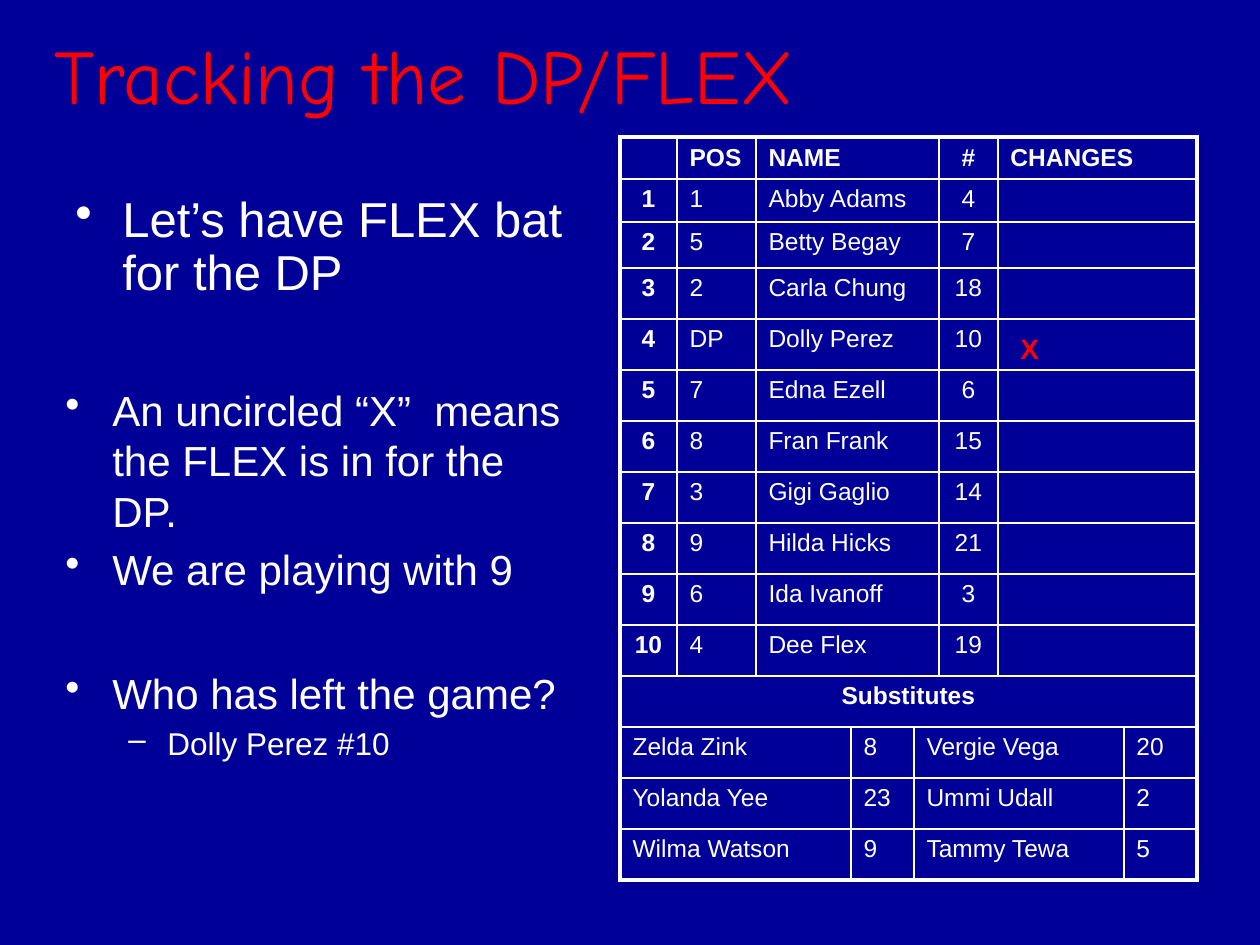
from dataclasses import dataclass

from lxml import etree
from pptx import Presentation
from pptx import util as u
from pptx.dml.color import RGBColor
from pptx.enum import text as t
from pptx.oxml.ns import qn

EMU_PER_PX = 914400 / 126
LEFT, CENTER = t.PP_ALIGN.LEFT, t.PP_ALIGN.CENTER


@dataclass(frozen=True)
class Theme:
    background: str = "000099"
    accent: str = "FF0000"
    ink: str = "FFFFFF"
    title_font: str = "Comic Neue"
    body_font: str = "Arial"
    title_size: int = 44
    lead_size: int = 28
    bullet_size: int = 24
    detail_size: int = 18
    mark_size: int = 16
    table_size: int = 14
    thin: float = 1
    thick: float = 2.25


THEME = Theme()


def px(length):
    return u.Emu(round(length * EMU_PER_PX))


def write(para, text, size, color=THEME.ink, font=THEME.body_font, bold=False,
          align=LEFT, before=0, spacing=None, bullet=None, indent=0, hang=0):
    para.alignment = align
    para.space_before = u.Pt(before)
    if spacing:
        para.line_spacing = spacing
    if bullet:
        props = para._p.get_or_add_pPr()
        props.set("marL", str(px(indent)))
        props.set("indent", str(-px(hang)))
        etree.SubElement(props, qn("a:buChar"), char=bullet)
    if not text:
        # An empty cell still needs a type size, or its row would grow
        etree.SubElement(para._p, qn("a:endParaRPr"), sz=str(size * 100))
        return
    span = para.add_run()
    span.text = text
    span.font.size = u.Pt(size)
    span.font.name = font
    span.font.bold = bold
    span.font.color.rgb = RGBColor.from_string(color)


class SlideBuilder:
    def __init__(self, deck, theme):
        self.theme = theme
        self.page = deck.slides.add_slide(deck.slide_layouts[5])
        fill = self.page.background.fill
        fill.solid()
        fill.fore_color.rgb = RGBColor.from_string(theme.background)

    def title(self, text, left, top, width, height):
        box = self.page.shapes.title
        box.left, box.top, box.width, box.height = map(px, (left, top, width, height))
        frame = box.text_frame
        frame.auto_size = t.MSO_AUTO_SIZE.NONE
        frame.vertical_anchor = t.MSO_ANCHOR.MIDDLE
        write(frame.paragraphs[0], text, self.theme.title_size,
              color=self.theme.accent, font=self.theme.title_font)

    def text_box(self, left, top, width, height):
        box = self.page.shapes.add_textbox(*map(px, (left, top, width, height)))
        box.text_frame.word_wrap = True
        return box.text_frame

    def bullets(self, place, items, spacing=None):
        """Each item is (text, size, level)."""
        frame = self.text_box(*place)
        for index, (text, size, level) in enumerate(items):
            para = frame.add_paragraph() if index else frame.paragraphs[0]
            para.level = level
            indent, hang, bullet = ((47, 47, "•"), (102, 39, "–"))[level]
            write(para, text, size, before=0.2 * size if index else 0,
                  spacing=spacing, bullet=bullet, indent=indent, hang=hang)

    def mark(self, text, left, top, width, height):
        frame = self.text_box(left, top, width, height)
        frame.auto_size = t.MSO_AUTO_SIZE.SHAPE_TO_FIT_TEXT
        write(frame.paragraphs[0], text, self.theme.mark_size,
              color=self.theme.accent, bold=True)

    def table(self, left, top, columns, heights, rows):
        """Each row is a list of (text, span, format)."""
        shape = self.page.shapes.add_table(
            len(heights), len(columns), px(left), px(top),
            px(sum(columns)), px(sum(heights)))
        grid = shape.table
        grid.first_row = grid.horz_banding = False
        for column, width in zip(grid.columns, columns):
            column.width = px(width)
        for row, height in zip(grid.rows, heights):
            row.height = px(height)
        for r, row in enumerate(rows):
            c = 0
            for text, span, style in row:
                end = c + span
                cell = grid.cell(r, c)
                if span > 1:
                    cell.merge(grid.cell(r, end - 1))
                if r == 0:
                    cell.vertical_anchor = t.MSO_ANCHOR.MIDDLE
                write(cell.text_frame.paragraphs[0], text,
                      self.theme.table_size, **style)
                outer = {"L": c == 0, "R": end == len(columns),
                         "T": r == 0, "B": r == len(rows) - 1}
                for part in range(c, end):
                    self.cell_frame(grid.cell(r, part), outer)
                c = end

    def cell_frame(self, cell, outer):
        cell.fill.background()
        props = cell._tc.get_or_add_tcPr()
        for index, (side, is_outer) in enumerate(outer.items()):
            weight = self.theme.thick if is_outer else self.theme.thin
            line = etree.Element(qn(f"a:ln{side}"), w=str(u.Pt(weight)))
            fill = etree.SubElement(line, qn("a:solidFill"))
            etree.SubElement(fill, qn("a:srgbClr"), val=self.theme.ink)
            props.insert(index, line)


LINEUP = [
    ("1", "Abby Adams", "4"), ("5", "Betty Begay", "7"),
    ("2", "Carla Chung", "18"), ("DP", "Dolly Perez", "10"),
    ("7", "Edna Ezell", "6"), ("8", "Fran Frank", "15"),
    ("3", "Gigi Gaglio", "14"), ("9", "Hilda Hicks", "21"),
    ("6", "Ida Ivanoff", "3"), ("4", "Dee Flex", "19"),
]
SUBSTITUTES = [
    ("Zelda Zink", "8", "Vergie Vega", "20"),
    ("Yolanda Yee", "23", "Ummi Udall", "2"),
    ("Wilma Watson", "9", "Tammy Tewa", "5"),
]


def lineup_row(order, position, name, number, changes="", bold=False):
    return [
        (order, 1, dict(bold=True, align=CENTER)),
        (position, 1, dict(bold=bold)),
        (name, 3, dict(bold=bold)),
        (number, 1, dict(bold=bold, align=CENTER)),
        (changes, 2, dict(bold=bold)),
    ]


def lineup_card():
    rows = [lineup_row("", "POS", "NAME", "#", "CHANGES", bold=True)]
    rows += [lineup_row(str(order), *player)
             for order, player in enumerate(LINEUP, start=1)]
    rows.append([("Substitutes", 8, dict(bold=True, align=CENTER))])
    rows += [[(text, span, {}) for text, span in zip(pair, (3, 1, 3, 1))]
             for pair in SUBSTITUTES]
    return rows


def main():
    deck = Presentation()
    deck.slide_width, deck.slide_height = px(1260), px(945)
    slide = SlideBuilder(deck, THEME)

    # Title and lead question
    slide.title("Tracking the DP/FLEX", 42, 21, 1071, 105)
    slide.bullets((63, 189, 525, 126),
                  [("Let’s have FLEX bat for the DP", THEME.lead_size, 0)],
                  spacing=0.9)

    # Mark in the changes column
    slide.mark("X", 1008, 325, 84, 47)

    # Explanation
    slide.bullets((53, 378, 525, 220), [
        ("An uncircled “X”  means the FLEX is in for the DP.", THEME.bullet_size, 0),
        ("We are playing with 9", THEME.bullet_size, 0),
    ])
    slide.bullets((53, 661, 525, 95), [
        ("Who has left the game?", THEME.bullet_size, 0),
        ("Dolly Perez #10", THEME.detail_size, 1),
    ])

    # Lineup card
    slide.table(620, 137, columns=[57, 79, 95, 63, 25, 59, 126, 73],
                heights=[41, 43, 46] + [51] * 12, rows=lineup_card())

    deck.save("out.pptx")


if __name__ == "__main__":
    main()
